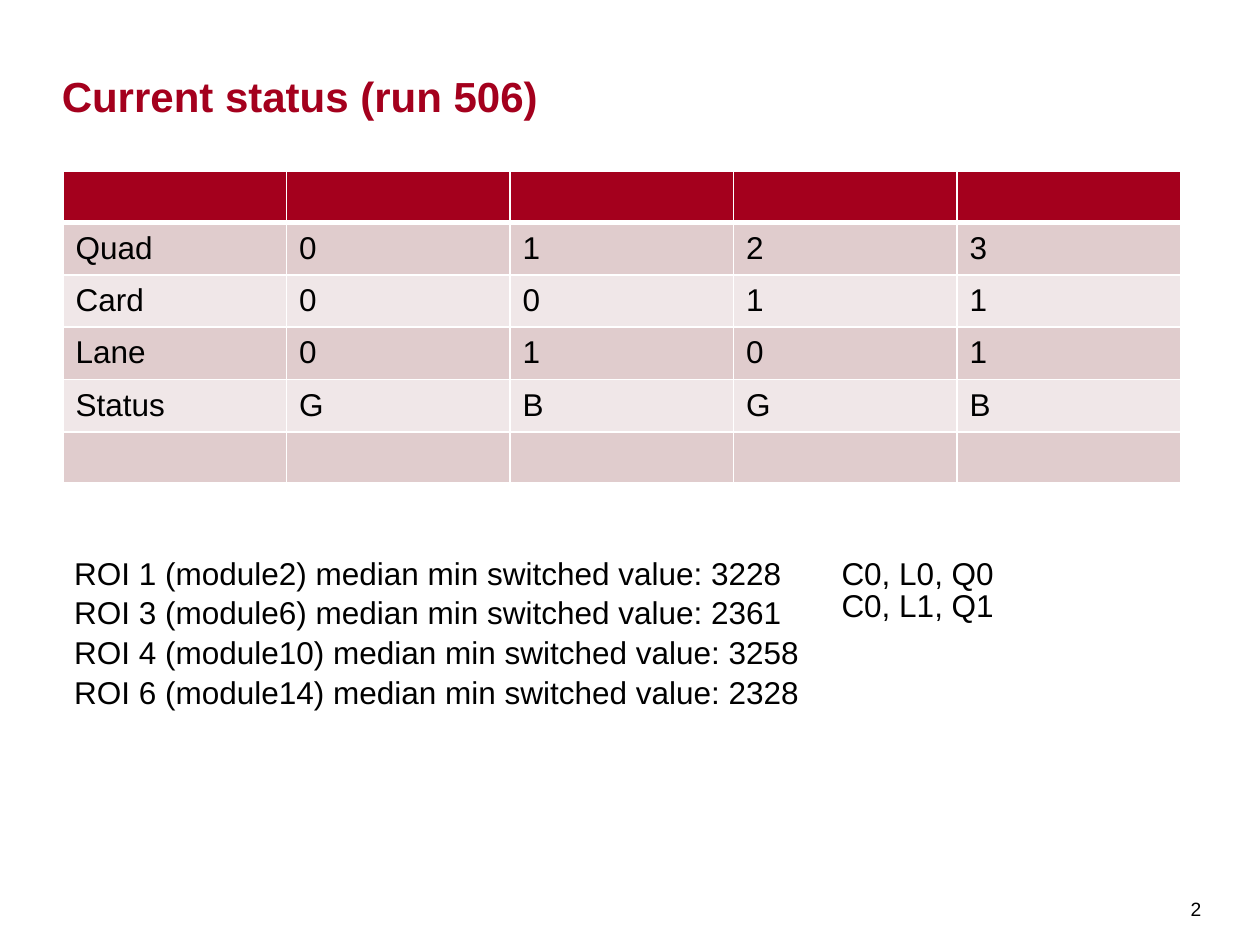
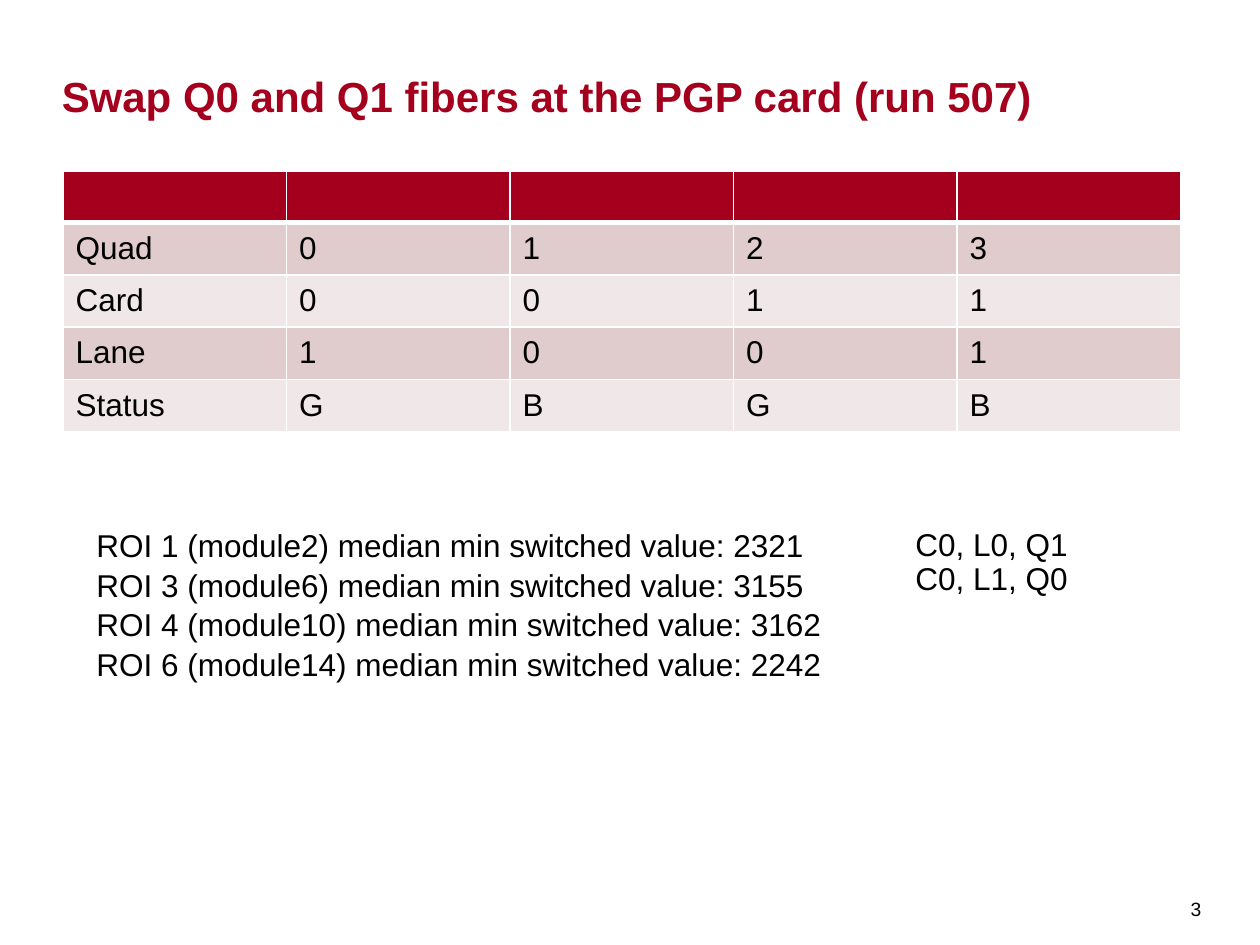
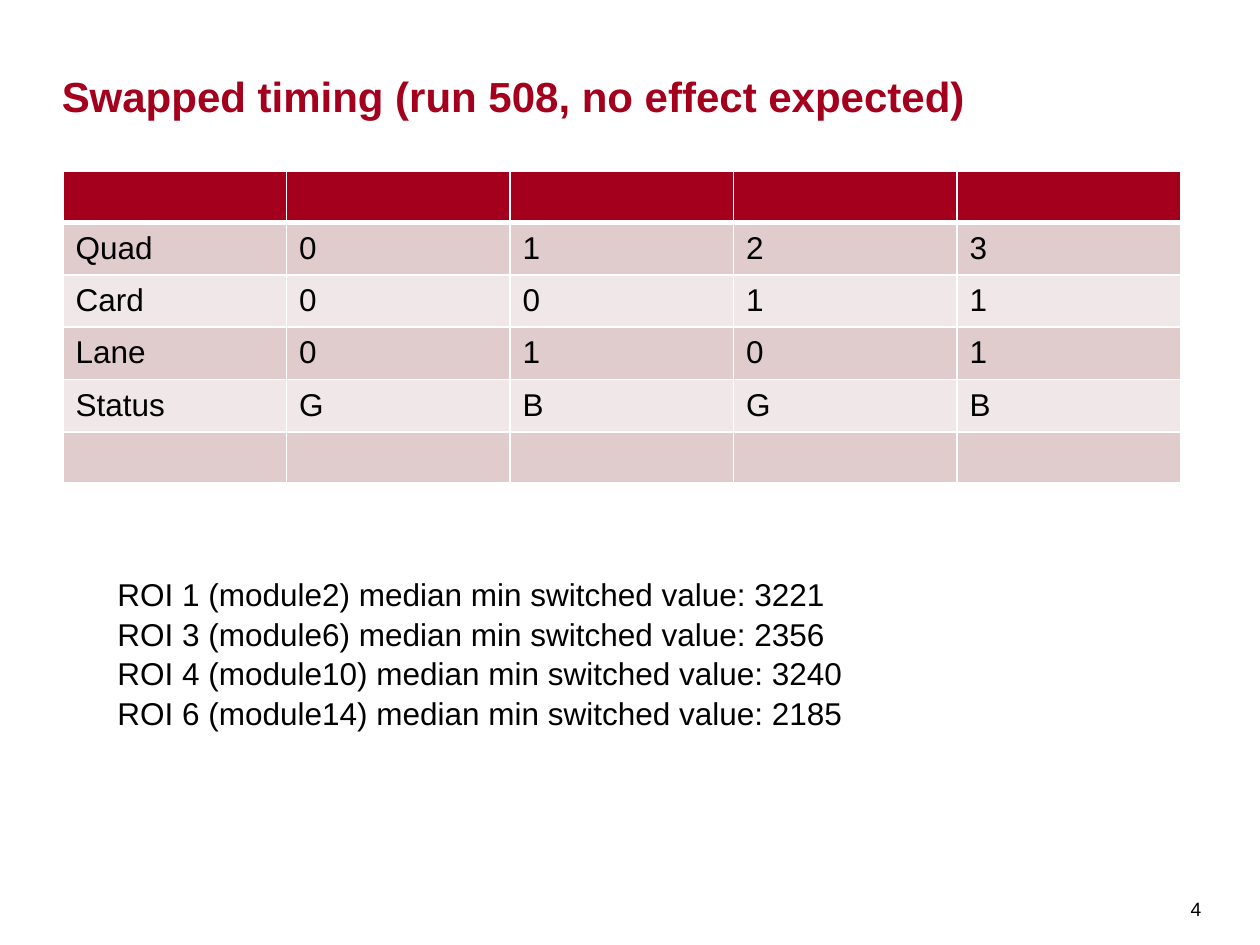
from dataclasses import dataclass

from lxml.etree import SubElement
from pptx import Presentation
from pptx.dml.color import RGBColor
from pptx.enum.text import MSO_ANCHOR, MSO_AUTO_SIZE, PP_ALIGN
from pptx.oxml.ns import qn
from pptx.util import Pt

FONT = "Arial"
CRIMSON = RGBColor(0xA4, 0x00, 0x1D)
BAND_DARK = RGBColor(0xE0, 0xCC, 0xCD)
BAND_LIGHT = RGBColor(0xF0, 0xE7, 0xE8)
WHITE = RGBColor(0xFF, 0xFF, 0xFF)
BLACK = RGBColor(0x00, 0x00, 0x00)
LINE_SPACING = 1.05

TABLE_LEFT, TABLE_TOP, TABLE_WIDTH = 36, 97.9, 638.65
ROW_HEIGHT = 29.2
BOX_HEIGHT = 28.8
ROI_MODULES = ((1, 2), (3, 6), (4, 10), (6, 14))


@dataclass(frozen=True)
class Label:
    text: str
    left: float
    top: float
    width: float
    wrap: bool = True


@dataclass(frozen=True)
class RunSlide:
    title: str
    lanes: str
    spare_row: bool
    medians: tuple[int, ...]
    medians_left: float
    medians_top: float
    medians_width: float
    labels: tuple[Label, ...] = ()


RUNS = (
    RunSlide(
        "Current status (run 506)", "0101", True,
        (3228, 2361, 3258, 2328), 35.3, 311.8, 438.5,
        (Label("C0, L0, Q0", 473.8, 311.8, 108),
         Label("C0, L1, Q1", 473.8, 330.5, 360)),
    ),
    RunSlide(
        "Swap Q0 and Q1 fibers at the PGP card (run 507)", "1001", False,
        (2321, 3155, 3162, 2242), 48, 295.9, 577.4,
        (Label("C0, L0, Q1", 516, 295.2, 102.2, wrap=False),
         Label("C0, L1, Q0", 516, 314.6, 109.4)),
    ),
    RunSlide(
        "Swapped timing (run 508, no effect expected)", "0101", True,
        (3221, 2356, 3240, 2185), 60, 324, 570.2,
    ),
)


def style_text(tf, size: float, color: RGBColor, bold: bool = False) -> None:
    for p in tf.paragraphs:
        p.alignment = PP_ALIGN.LEFT
        p.line_spacing = LINE_SPACING
        for r in p.runs:
            r.font.name = FONT
            r.font.size = Pt(size)
            r.font.bold = bold
            r.font.color.rgb = color


def set_margins(tf, left: float, top: float, right: float, bottom: float) -> None:
    tf.margin_left, tf.margin_top = Pt(left), Pt(top)
    tf.margin_right, tf.margin_bottom = Pt(right), Pt(bottom)


def add_title(slide, text: str) -> None:
    sp = slide.shapes.title
    sp.left, sp.top, sp.width, sp.height = Pt(35.3), Pt(10), Pt(638), Pt(59)
    tf = sp.text_frame
    tf.text = text
    tf.auto_size = MSO_AUTO_SIZE.NONE
    tf.vertical_anchor = MSO_ANCHOR.BOTTOM
    set_margins(tf, 0, 0, 0, 0)
    style_text(tf, 24, CRIMSON, bold=True)


def add_text(slide, label: Label, height: float = BOX_HEIGHT, size: float = 18):
    sp = slide.shapes.add_textbox(
        Pt(label.left), Pt(label.top), Pt(label.width), Pt(height))
    tf = sp.text_frame
    tf.text = label.text
    tf.word_wrap = label.wrap
    style_text(tf, size, BLACK)
    return tf


def add_page_number(slide, number: int) -> None:
    tf = add_text(slide, Label(str(number), 674.6, 497.5, 25.2), 42.5, 11)
    tf.vertical_anchor = MSO_ANCHOR.MIDDLE
    set_margins(tf, 5.8, 4.3, 5.8, 3.6)


def set_border(cell, side: str, width: float) -> None:
    ln = SubElement(cell._tc.get_or_add_tcPr(), qn(f"a:ln{side}"), w=str(Pt(width)))
    fill = SubElement(ln, qn("a:solidFill"))
    SubElement(fill, qn("a:srgbClr"), val=str(WHITE))


def add_lane_table(slide, run: RunSlide) -> None:
    rows = [
        [""] * 5,
        ["Quad", *"0123"],
        ["Card", *"0011"],
        ["Lane", *run.lanes],
        ["Status", *"GBGB"],
    ]
    if run.spare_row:
        rows.append([""] * 5)
    table = slide.shapes.add_table(
        len(rows), 5, Pt(TABLE_LEFT), Pt(TABLE_TOP),
        Pt(TABLE_WIDTH), Pt(ROW_HEIGHT * len(rows))).table
    table.first_row = table.horz_banding = False
    for i, values in enumerate(rows):
        table.rows[i].height = Pt(ROW_HEIGHT)
        for j, value in enumerate(values):
            cell = table.cell(i, j)
            widths = {"L": 1, "R": 1, "T": 3 if i == 1 else 1, "B": 3 if i == 0 else 1}
            for side, width in widths.items():
                set_border(cell, side, width)
            cell.fill.solid()
            band = BAND_DARK if i % 2 else BAND_LIGHT
            cell.fill.fore_color.rgb = band if i else CRIMSON
            if value:
                cell.text_frame.text = value
                style_text(cell.text_frame, 18, BLACK)


def add_medians(slide, run: RunSlide) -> None:
    text = "\n".join(
        f"ROI {roi} (module{module}) median min switched value: {median}"
        for (roi, module), median in zip(ROI_MODULES, run.medians))
    add_text(slide, Label(text, run.medians_left, run.medians_top, run.medians_width), 94.3)


def main() -> None:
    prs = Presentation()
    prs.slide_width, prs.slide_height = Pt(720), Pt(540)
    for number, run in enumerate(RUNS, start=2):
        slide = prs.slides.add_slide(prs.slide_layouts[5])
        add_page_number(slide, number)
        add_title(slide, run.title)
        add_lane_table(slide, run)
        add_medians(slide, run)
        for label in run.labels:
            add_text(slide, label)
    prs.save("out.pptx")


if __name__ == "__main__":
    main()
